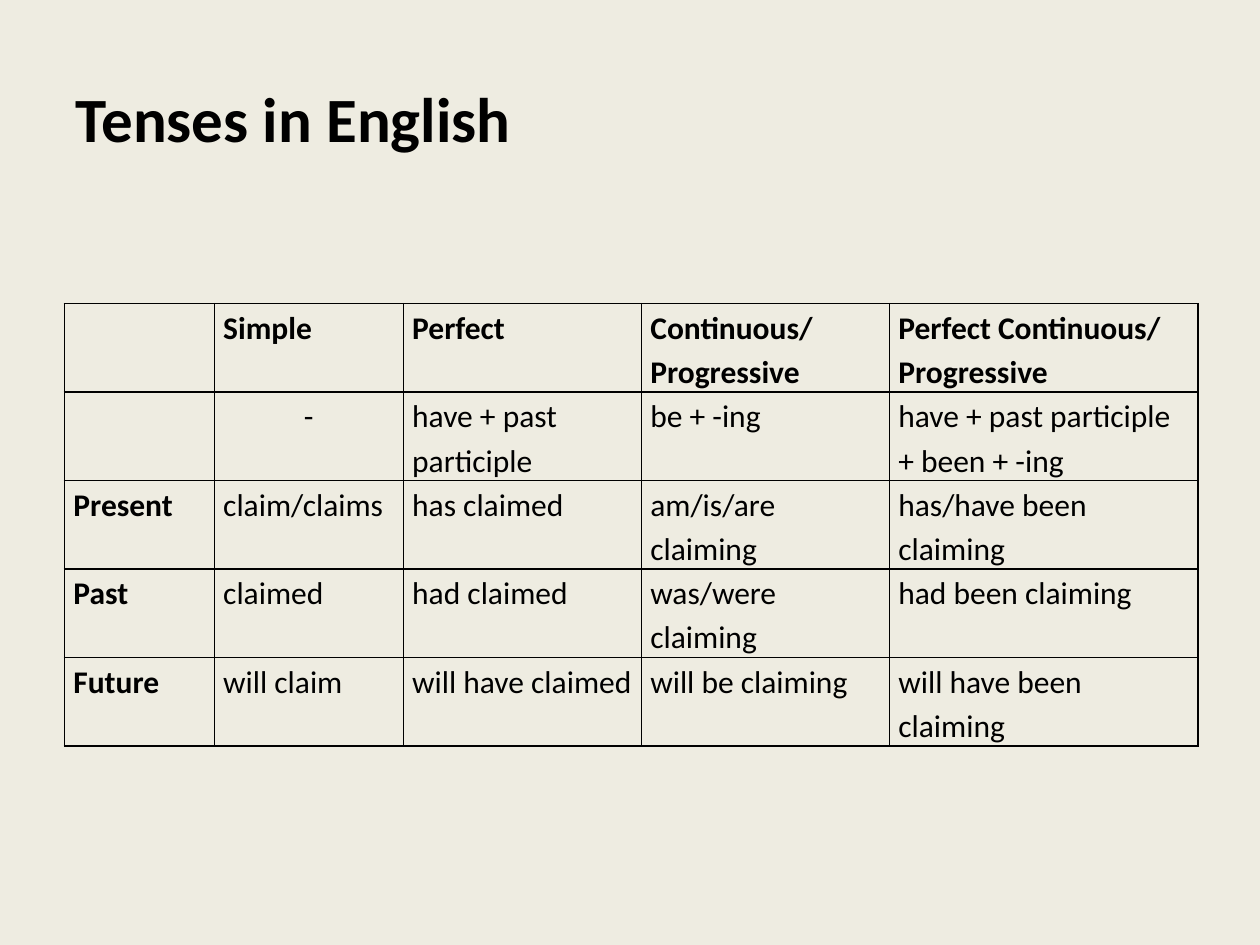
import pptx
import pptx.dml.color
import pptx.enum.text
import pptx.oxml
import pptx.oxml.ns
import pptx.util
from pptx.util import Cm

COLOURS = {"background": "EEECE1", "ink": "000000"}
COLUMN_WIDTHS = [3.02, 3.81, 4.8, 5, 6.22]
ROW_HEIGHT = 1.78
TENSES = [
    ["", "Simple", "Perfect", "Continuous/\nProgressive", "Perfect Continuous/\nProgressive"],
    ["", "-", "have + past participle", "be + -ing", "have + past participle \v+ been + -ing"],
    ["Present", "claim/claims", "has claimed", "am/is/are claiming", "has/have been claiming"],
    ["Past", "claimed", "had claimed", "was/were claiming", "had been claiming"],
    ["Future", "will claim", "will have claimed", "will be claiming", "will have been claiming"],
]


def colour(name):
    return pptx.dml.color.RGBColor.from_string(COLOURS[name])


class SlideWriter:
    font = "Calibri"
    title_size = 36
    cell_size = 18
    border_width = 1

    def __init__(self, slide):
        self.slide = slide

    def background(self):
        fill = self.slide.background.fill
        fill.solid()
        fill.fore_color.rgb = colour("background")

    def format_text(self, para, size, bold):
        for span in para.runs:
            span.font.name = self.font
            span.font.size = pptx.util.Pt(size)
            span.font.bold = bold
            span.font.color.rgb = colour("ink")

    def title(self, text, left, top, width, height):
        box = self.slide.shapes.title
        box.left, box.top, box.width, box.height = Cm(left), Cm(top), Cm(width), Cm(height)
        box.text_frame.text = text
        box.text_frame.vertical_anchor = pptx.enum.text.MSO_ANCHOR.MIDDLE
        para = box.text_frame.paragraphs[0]
        para.alignment = pptx.enum.text.PP_ALIGN.LEFT
        self.format_text(para, self.title_size, True)

    def borders(self, cell):
        properties = cell._tc.get_or_add_tcPr()
        for side in ("lnL", "lnR", "lnT", "lnB"):
            properties.append(pptx.oxml.parse_xml(
                f'<a:{side} {pptx.oxml.ns.nsdecls("a")} w="{pptx.util.Pt(self.border_width)}">'
                f'<a:solidFill><a:srgbClr val="{COLOURS["ink"]}"/></a:solidFill></a:{side}>'
            ))

    def cell(self, cell, text, bold, centred):
        self.borders(cell)
        cell.fill.background()
        cell.margin_left = cell.margin_right = Cm(0.18)
        cell.margin_top = cell.margin_bottom = 0
        cell.text_frame.text = text
        for para in cell.text_frame.paragraphs:
            para.line_spacing = 1.15
            if centred:
                para.alignment = pptx.enum.text.PP_ALIGN.CENTER
            self.format_text(para, self.cell_size, bold)

    def table(self, rows, widths, row_height, left, top):
        frame = self.slide.shapes.add_table(
            len(rows), len(widths), Cm(left), Cm(top),
            Cm(sum(widths)), Cm(row_height * len(rows)),
        )
        table = frame.table
        table.first_row = table.horz_banding = False
        for column, width in zip(table.columns, widths):
            column.width = Cm(width)
        for row_index, texts in enumerate(rows):
            table.rows[row_index].height = Cm(row_height)
            for column_index, text in enumerate(texts):
                heading = row_index == 0 or column_index == 0
                self.cell(table.cell(row_index, column_index), text, heading, text == "-")


def main():
    deck = pptx.Presentation()
    deck.slide_width, deck.slide_height = Cm(25.4), Cm(19.05)
    page = SlideWriter(deck.slides.add_slide(deck.slide_layouts[5]))
    page.background()
    page.title("Tenses in English", 1.27, 0.76, 22.86, 3.2)
    page.table(TENSES, COLUMN_WIDTHS, ROW_HEIGHT, 1.3, 6.12)
    deck.save("out.pptx")


if __name__ == "__main__":
    main()
